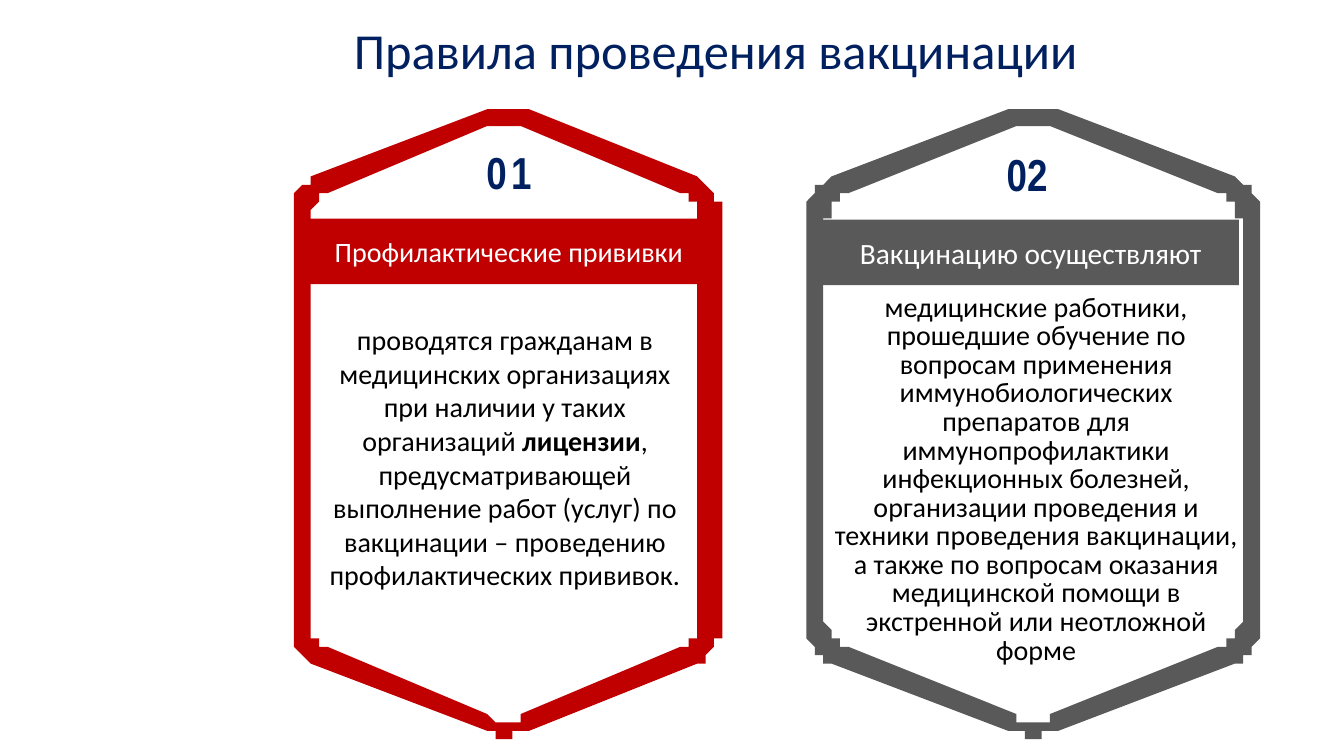
from dataclasses import dataclass

from pptx import Presentation, util as u
from pptx.dml.color import RGBColor
from pptx.enum import shapes, text
from pptx.oxml import ns, xmlchemy


@dataclass(frozen=True)
class Theme:
    navy: str = "002060"
    red: str = "C00000"
    grey: str = "595959"
    white: str = "FFFFFF"
    black: str = "000000"
    font: str = "Calibri"
    number_font: str = "Arial Narrow"
    title_size: int = 36
    number_size: int = 32
    band_size: int = 21
    body_size: int = 20


THEME = Theme()
COLUMNS, ROWS = 160, 90
CENTER, LEFT = text.PP_ALIGN.CENTER, text.PP_ALIGN.LEFT
TOP, MIDDLE = text.MSO_ANCHOR.TOP, text.MSO_ANCHOR.MIDDLE

CARDS = [
    dict(
        number="01", color=THEME.red, center=60.1, half_width=25.5,
        number_box=(57.36, 17.28, 6.48, 6.48), number_spacing=3,
        heading="Профилактические прививки", heading_size=THEME.body_size,
        band_box=(36.48, 26.04, 48.24, 7.8),
        body=[
            ("проводятся гражданам в медицинских организациях при наличии у таких организаций ", False),
            ("лицензии", True),
            (", предусматривающей выполнение работ (услуг) по вакцинации – проведению "
             "профилактических прививок.", False),
        ],
        body_box=(37.44, 38.4, 45.36, 32.28), line_spacing=1.0,
    ),
    dict(
        number="02", color=THEME.grey, center=123, half_width=26.88,
        number_box=(119.16, 17.52, 6.24, 6.48), number_spacing=0,
        heading="Вакцинацию осуществляют", heading_size=THEME.band_size,
        band_box=(97.92, 26.16, 49.56, 7.8),
        body=[
            ("медицинские работники, прошедшие обучение по вопросам применения "
             "иммунобиологических препаратов для иммунопрофилактики инфекционных болезней, "
             "организации проведения и техники проведения вакцинации, а также по вопросам "
             "оказания медицинской помощи в экстренной или неотложной форме", False),
        ],
        body_box=(99.24, 35.04, 48.24, 44.64), line_spacing=0.85,
    ),
]


def write(shape, runs, size, color, font=THEME.font, align=CENTER, anchor=TOP,
          inset=0, wrap=True, line_spacing=1.0, letter_spacing=0):
    frame = shape.text_frame
    frame.auto_size = text.MSO_AUTO_SIZE.NONE
    frame.word_wrap = wrap
    frame.vertical_anchor = anchor
    frame.margin_left = frame.margin_right = u.Inches(inset)
    frame.margin_top = frame.margin_bottom = u.Inches(inset / 2)
    paragraph = frame.paragraphs[0]
    paragraph.alignment = align
    paragraph.line_spacing = line_spacing
    paragraph.space_before = paragraph.space_after = u.Pt(0)
    for words, bold in runs:
        run = paragraph.add_run()
        run.text = words
        run.font.name = font
        run.font.size = u.Pt(size)
        run.font.bold = bold
        run.font.color.rgb = RGBColor.from_string(color)
        if letter_spacing:
            run.font._element.set("spc", str(letter_spacing * 100))
    return paragraph


def curve(points, steps=8):
    a, b, c, d = points
    for step in range(steps + 1):
        t = step / steps
        s = 1 - t
        yield tuple(s**3 * p + 3 * s * s * t * q + 3 * s * t * t * r + t**3 * v
                    for p, q, r, v in zip(a, b, c, d))


def hexagon(center, half_width, half_height, middle):
    corner = [
        *curve([(0, -1), (0.04, -1), (0.07, -1), (0.1, -0.99)]),
        *curve([(0.9, -0.77), (0.95, -0.75), (1, -0.71), (1, -0.68)]),
    ]
    right = corner + [(x, -y) for x, y in reversed(corner)]
    outline = right + [(-x, y) for x, y in reversed(right)]
    return [(center + x * half_width, middle + y * half_height) for x, y in outline]


class SlideBuilder:
    def __init__(self, presentation, theme):
        self.theme = theme
        self.column = presentation.slide_width / COLUMNS
        self.row = presentation.slide_height / ROWS
        self.slide = presentation.slides.add_slide(presentation.slide_layouts[3])

    def place(self, box):
        left, top, width, height = box
        return (round(left * self.column), round(top * self.row),
                round(width * self.column), round(height * self.row))

    def move(self, shape, box):
        shape.left, shape.top, shape.width, shape.height = self.place(box)

    def paint(self, shape, color):
        shape.shadow.inherit = False
        shape.fill.solid()
        shape.fill.fore_color.rgb = RGBColor.from_string(color)
        shape.line.fill.background()

    def title(self, words, box):
        shape = self.slide.shapes.title
        self.move(shape, box)
        write(shape, [(words, False)], self.theme.title_size, self.theme.navy,
              align=LEFT, inset=0.1, wrap=False)

    def frame(self, center, half_width, color, half_height=37.38, middle=50.15, border=(2.35, 1.92)):
        outer = hexagon(center, half_width, half_height, middle)
        inner = hexagon(center, half_width - border[0], half_height - border[1], middle)
        builder = self.slide.shapes.build_freeform(*outer[0], scale=(self.column, self.row))
        builder.add_line_segments(outer[1:], close=True)
        builder.move_to(*inner[0])
        builder.add_line_segments(inner[1:], close=True)
        self.paint(builder.convert_to_shape(), color)

    def number(self, words, box, letter_spacing):
        shape = self.slide.shapes.add_textbox(*self.place(box))
        write(shape, [(words, True)], self.theme.number_size, self.theme.navy,
              font=self.theme.number_font, letter_spacing=letter_spacing)

    def band(self, words, box, color, size):
        shape = self.slide.shapes.add_shape(shapes.MSO_SHAPE.RECTANGLE, *self.place(box))
        self.paint(shape, color)
        write(shape, [(words, False)], size, self.theme.white, anchor=MIDDLE, inset=0.1)

    def body(self, index, runs, box, line_spacing):
        shape = self.slide.placeholders[index]
        self.move(shape, box)
        properties = shape.text_frame.paragraphs[0]._p.get_or_add_pPr()
        properties.set("marL", "0")
        properties.set("indent", "0")
        properties.append(xmlchemy.OxmlElement("a:buNone"))
        write(shape, runs, self.theme.body_size, self.theme.black, line_spacing=line_spacing)

    def card(self, index, card):
        self.frame(card["center"], card["half_width"], card["color"])
        self.band(card["heading"], card["band_box"], card["color"], card["heading_size"])
        self.number(card["number"], card["number_box"], card["number_spacing"])
        self.body(index, card["body"], card["body_box"], card["line_spacing"])


def main():
    presentation = Presentation()
    presentation.slide_width = u.Inches(13.33)
    presentation.slide_height = u.Inches(7.5)
    builder = SlideBuilder(presentation, THEME)
    builder.title("Правила проведения вакцинации", (40.92, 1.68, 89.52, 8.52))
    for index, card in enumerate(CARDS, start=1):
        builder.card(index, card)
    presentation.save("out.pptx")


if __name__ == "__main__":
    main()
